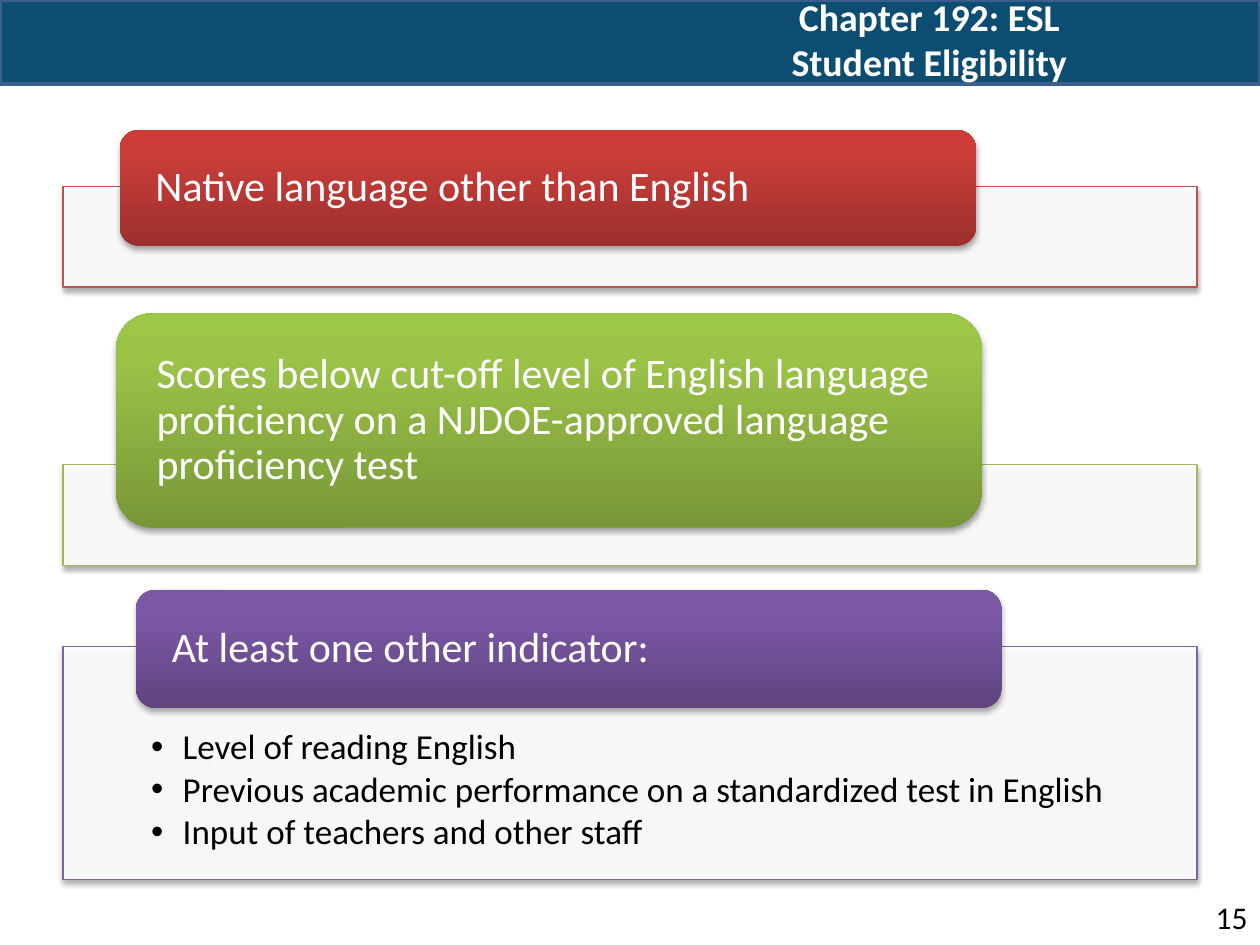
from lxml import etree
from pptx import Presentation
from pptx.dml.color import RGBColor
from pptx.enum.shapes import MSO_SHAPE as SHAPE
from pptx.enum.text import MSO_ANCHOR as ANCHOR, PP_ALIGN as ALIGN
from pptx.oxml.ns import qn
from pptx.util import Cm, Pt

FONT = "Calibri"
TITLE = ["Chapter 192: ESL", "Student Eligibility"]
PAGE = "15"
INDICATORS = [
    "Level of reading English",
    "Previous academic performance on a standardized test in English",
    "Input of teachers and other staff",
]
# Boxes are left, top, width, height in cm; gradients run from bottom to top.
CRITERIA = [
    dict(text="Native language other than English",
         frame=(1.27, 3.76, 22.86, 2.03), label=(2.41, 2.62, 17.27, 2.34),
         line="C0504D", gradient=("9C2F2D", "CB3E3A", "CE3B37"), bullets=[]),
    dict(text="Scores below cut-off level of English language proficiency "
              "on a NJDOE-approved language proficiency test",
         frame=(1.27, 9.37, 22.86, 2.03), label=(2.34, 6.32, 17.45, 4.32),
         line="9BBB59", gradient=("779737", "9BC348", "9DC746"), bullets=[]),
    dict(text="At least one other indicator:",
         frame=(1.27, 13.03, 22.86, 4.7), label=(2.74, 11.89, 17.45, 2.39),
         line="8064A2", gradient=("5F4480", "7B58A6", "7C57A8"),
         bullets=INDICATORS),
]


def rgb(code):
    return RGBColor.from_string(code)


def sub(parent, tag, **attrs):
    el = etree.SubElement(parent, qn(tag))
    for key, value in attrs.items():
        el.set(key, str(value))
    return el


def add_box(shapes, kind, box):
    sp = shapes.add_shape(kind, *map(Cm, box))
    sp.shadow.inherit = False
    return sp


def add_shadow(sp):
    effects = sp._element.spPr.find(qn("a:effectLst"))
    shadow = sub(effects, "a:outerShdw", blurRad=Pt(3.1), dist=Pt(1.8),
                 dir=5400000, rotWithShape=0)
    sub(sub(shadow, "a:srgbClr", val="000000"), "a:alpha", val=35000)


def fill_gradient(sp, colors):
    sp.fill.gradient()
    sp.fill.gradient_angle = 90
    stops = sp._element.spPr.find(".//" + qn("a:gsLst"))
    for old in list(stops):
        stops.remove(old)
    for pos, color in zip((0, 80000, 100000), colors):
        sub(sub(stops, "a:gs", pos=pos), "a:srgbClr", val=color)


def setup_text(sp, margins, anchor):
    tf = sp.text_frame
    tf.word_wrap = True
    tf.vertical_anchor = anchor
    (tf.margin_left, tf.margin_top,
     tf.margin_right, tf.margin_bottom) = map(Cm, margins)
    return tf


def add_run(p, text, size, color, bold=False):
    r = p.add_run()
    r.text = text
    r.font.name, r.font.size, r.font.bold = FONT, Pt(size), bold
    r.font.color.rgb = rgb(color)


def add_frame(shapes, item):
    sp = add_box(shapes, SHAPE.RECTANGLE, item["frame"])
    sp.fill.solid()
    sp.fill.fore_color.rgb = rgb("FFFFFF")
    sub(sp._element.spPr.find(".//" + qn("a:srgbClr")), "a:alpha", val=90000)
    sp.line.color.rgb = rgb(item["line"])
    sp.line.width = Pt(0.75)
    add_shadow(sp)
    if not item["bullets"]:
        return
    tf = setup_text(sp, (1.78, 1.68, 1.78, 0.41), ANCHOR.TOP)
    for i, text in enumerate(item["bullets"]):
        p = tf.add_paragraph() if i else tf.paragraphs[0]
        p.alignment = ALIGN.LEFT
        p.line_spacing = 0.9
        p.space_after = Pt(2.6)
        pPr = p._p.get_or_add_pPr()
        pPr.set("marL", str(Cm(0.635)))
        pPr.set("indent", str(-Cm(0.635)))
        sub(pPr, "a:buFont", typeface="Arial")
        sub(pPr, "a:buChar", char="•")
        add_run(p, text, 20, "000000")


def add_label(shapes, item):
    sp = add_box(shapes, SHAPE.ROUNDED_RECTANGLE, item["label"])
    fill_gradient(sp, item["gradient"])
    sp.line.fill.background()
    add_shadow(sp)
    p = setup_text(sp, (0.61, 0, 0.61, 0), ANCHOR.MIDDLE).paragraphs[0]
    p.alignment = ALIGN.LEFT
    p.line_spacing = 0.9
    add_run(p, item["text"], 24, "FFFFFF")


def main():
    prs = Presentation()
    prs.slide_width, prs.slide_height = Cm(25.4), Cm(19.05)
    shapes = prs.slides.add_slide(prs.slide_layouts[6]).shapes

    band = add_box(shapes, SHAPE.RECTANGLE, (0, 0, 25.4, 1.7))
    band.fill.solid()
    band.fill.fore_color.rgb = rgb("0E4D72")
    band.line.color.rgb = rgb("3A5F8C")
    band.line.width = Pt(2)

    title = shapes.add_textbox(*map(Cm, (12.07, 0, 13.33, 1.57)))
    p = setup_text(title, (0.25, 0.13, 0.25, 0.13), ANCHOR.MIDDLE).paragraphs[0]
    p.alignment = ALIGN.CENTER
    for i, text in enumerate(TITLE):
        if i:
            p.add_line_break()
        add_run(p, text, 21.6, "FFFFFF", bold=True)

    page = shapes.add_textbox(*map(Cm, (23.7, 17.98, 1.7, 1.02)))
    p = setup_text(page, (0.25, 0.13, 0.25, 0.13), ANCHOR.TOP).paragraphs[0]
    p.alignment = ALIGN.RIGHT
    add_run(p, PAGE, 18, "000000")

    for item in CRITERIA:
        add_frame(shapes, item)
        add_label(shapes, item)

    prs.save("out.pptx")


if __name__ == "__main__":
    main()
